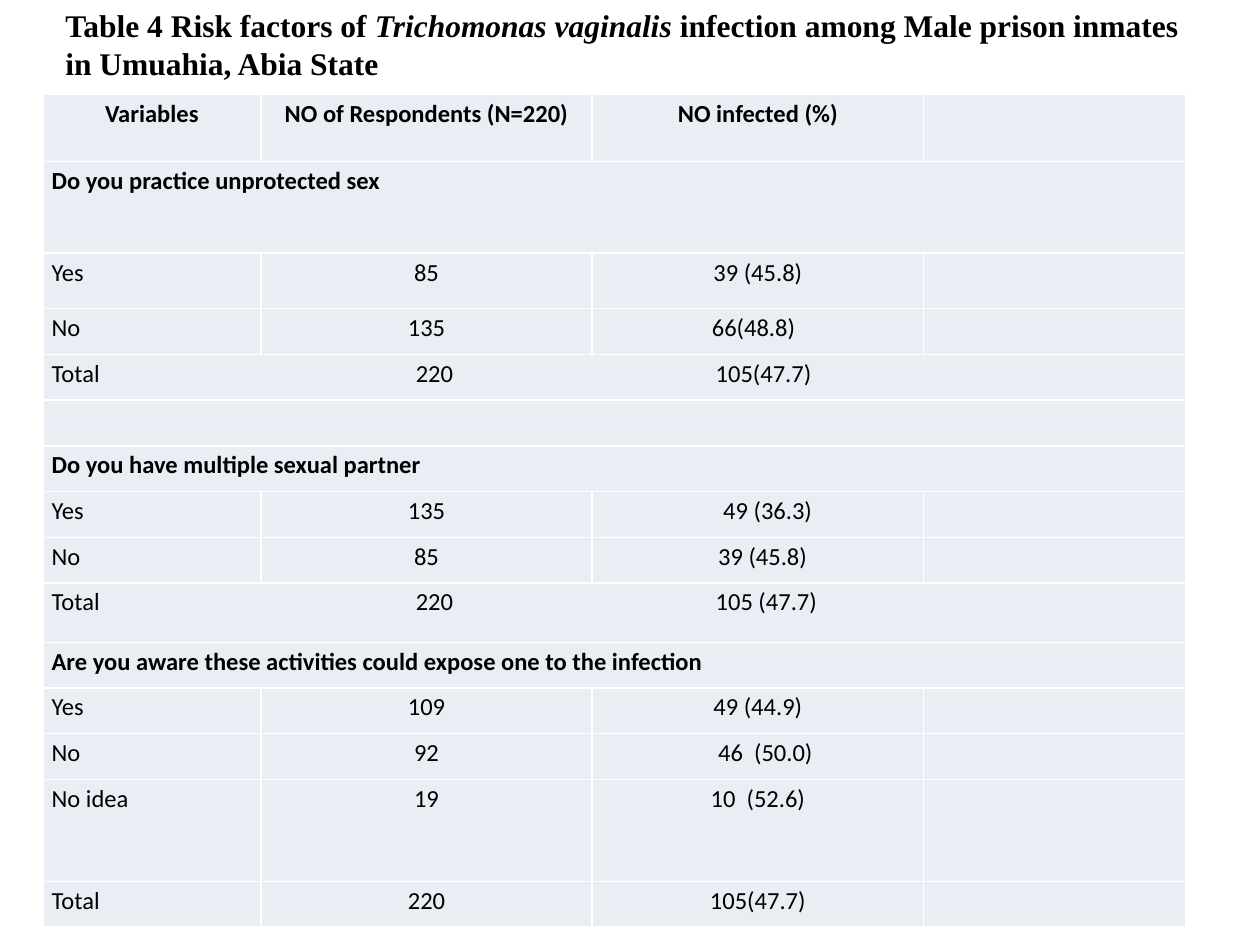
import pptx
import pptx.dml.color
import pptx.enum.text
import pptx.oxml
import pptx.oxml.ns
import pptx.util
from lxml import etree

Inches = pptx.util.Inches
CENTER = pptx.enum.text.PP_ALIGN.CENTER
LEFT = pptx.enum.text.PP_ALIGN.LEFT
COLORS = {"text": "000000", "cell": "E9EDF4", "border": "FFFFFF"}

COLUMN_WIDTHS = [1.73, 2.63, 2.63, 2.08]
ROW_HEIGHT = 0.363
TALL_ROWS = {0: 0.53, 1: 0.73, 2: 0.44, 9: 0.47, 13: 0.81}
TAB_STOPS = [2.89, 5.27]
INFECTED_INDENTS = {3: 0.88, 7: 0.97, 8: 0.93, 12: 0.93}
BOLD_ROWS = {0, 1, 6, 10}

# A row with a single text spans the whole table.
ROWS = [
    ["Variables", "NO of Respondents (N=220)", "NO infected (%)", ""],
    ["Do you practice unprotected sex"],
    ["Yes", "85", "39 (45.8)", ""],
    ["No", "135", "66(48.8)", ""],
    ["Total\t220\t105(47.7)"],
    [""],
    ["Do you have multiple sexual partner"],
    ["Yes", "135", "49 (36.3)", ""],
    ["No", "85", "39 (45.8)", ""],
    ["Total\t220\t105 (47.7)"],
    ["Are you aware these activities could expose one to the infection"],
    ["Yes", "109", "49 (44.9)", ""],
    ["No", "92", "46  (50.0)", ""],
    ["No idea", "19", "10  (52.6)", ""],
    ["Total", "220", "105(47.7)", ""],
]


def add_run(paragraph, text, font_name, size, bold, italic=False):
    run = paragraph.add_run()
    run.text = text
    run.font.name = font_name
    run.font.size = pptx.util.Pt(size)
    run.font.bold = bold
    run.font.italic = italic
    run.font.color.rgb = pptx.dml.color.RGBColor.from_string(COLORS["text"])


def style_cell(cell):
    """Set insets, fill and a 1 pt border on every side."""
    cell.margin_left = cell.margin_right = Inches(0.07)
    cell.margin_top = cell.margin_bottom = 0
    properties = cell._tc.get_or_add_tcPr()
    for side in ("lnL", "lnR", "lnT", "lnB"):
        properties.append(pptx.oxml.parse_xml(
            f'<a:{side} {pptx.oxml.ns.nsdecls("a")} w="12700"><a:solidFill>'
            f'<a:srgbClr val="{COLORS["border"]}"/></a:solidFill></a:{side}>'))
    cell.fill.solid()
    cell.fill.fore_color.rgb = pptx.dml.color.RGBColor.from_string(COLORS["cell"])


presentation = pptx.Presentation()
presentation.slide_width = Inches(10)
presentation.slide_height = Inches(7.5)
slide = presentation.slides.add_slide(presentation.slide_layouts[6])

title = slide.shapes.add_textbox(Inches(0.42), 0, Inches(9.21), Inches(0.68))
title.text_frame.word_wrap = True
for text, italic in [
    ("Table 4 Risk factors of ", False),
    ("Trichomonas vaginalis", True),
    (" infection among Male prison inmates in Umuahia, Abia State", False),
]:
    add_run(title.text_frame.paragraphs[0], text, "Times New Roman", 18, True, italic)

heights = [TALL_ROWS.get(index, ROW_HEIGHT) for index in range(len(ROWS))]
table = slide.shapes.add_table(
    len(ROWS), len(COLUMN_WIDTHS), Inches(0.34), Inches(0.75),
    Inches(sum(COLUMN_WIDTHS)), Inches(sum(heights))).table
table.first_row = table.horz_banding = False
for column, width in zip(table.columns, COLUMN_WIDTHS):
    column.width = Inches(width)

for row_index, texts in enumerate(ROWS):
    table.rows[row_index].height = Inches(heights[row_index])
    for column_index in range(len(COLUMN_WIDTHS)):
        style_cell(table.cell(row_index, column_index))
    if len(texts) == 1:
        table.cell(row_index, 0).merge(table.cell(row_index, len(COLUMN_WIDTHS) - 1))

    for column_index, text in enumerate(texts):
        if not text:
            continue
        paragraph = table.cell(row_index, column_index).text_frame.paragraphs[0]
        paragraph.line_spacing = 1.15
        paragraph.alignment = CENTER if column_index or row_index == 0 else LEFT
        properties = paragraph._p.get_or_add_pPr()
        if column_index == 2 and row_index in INFECTED_INDENTS:
            paragraph.alignment = LEFT
            properties.set("marL", str(Inches(INFECTED_INDENTS[row_index])))
        if "\t" in text:
            tab_list = etree.SubElement(properties, pptx.oxml.ns.qn("a:tabLst"))
            for stop in TAB_STOPS:
                etree.SubElement(tab_list, pptx.oxml.ns.qn("a:tab"),
                                 pos=str(Inches(stop)), algn="l")
        add_run(paragraph, text, "Calibri", 14, row_index in BOLD_ROWS)

presentation.save("out.pptx")
